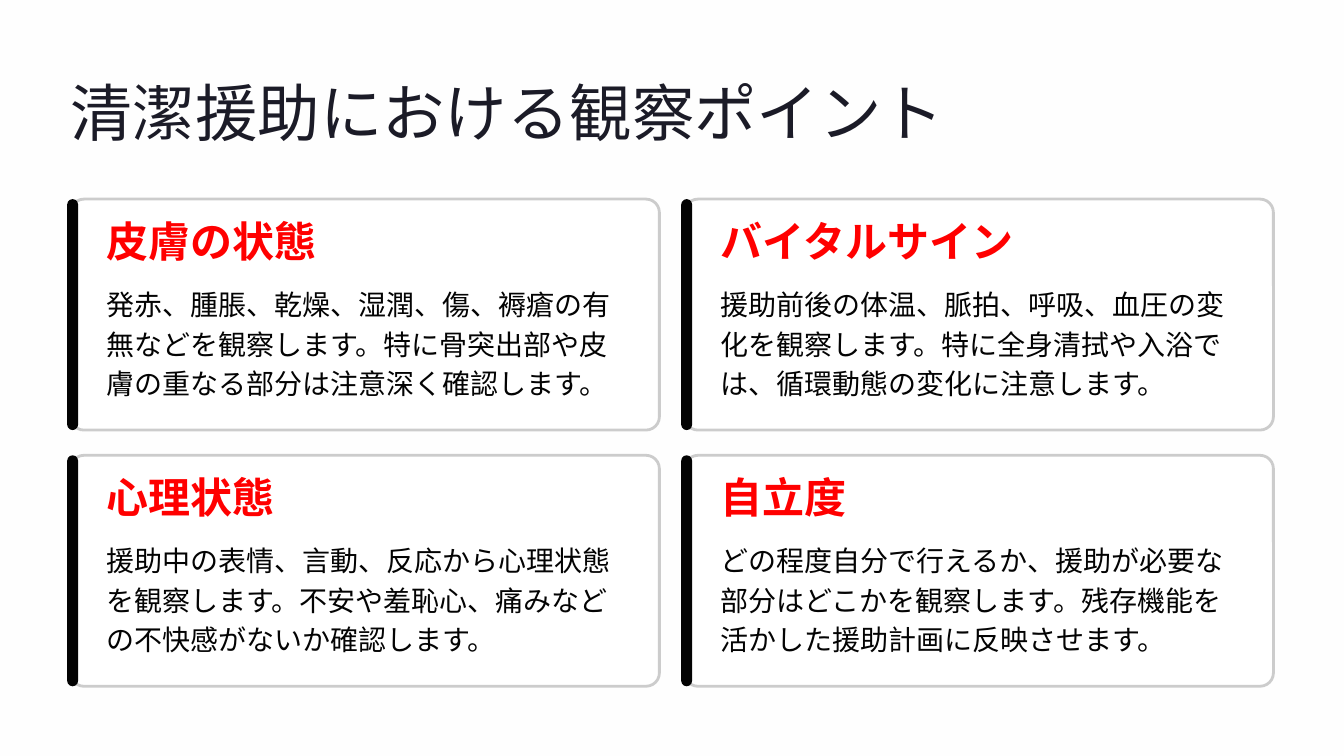
from pptx import Presentation
from pptx.dml.color import RGBColor
from pptx.enum.shapes import MSO_SHAPE
from pptx.util import Inches, Pt

BACKGROUND = RGBColor(0xFE, 0xFE, 0xFE)
WHITE = RGBColor(0xFF, 0xFF, 0xFF)
BORDER = RGBColor(0xCC, 0xCC, 0xCC)
NAVY = RGBColor(0x1B, 0x1B, 0x27)
BLACK = RGBColor(0x03, 0x03, 0x03)
RED = RGBColor(0xFF, 0x00, 0x00)

TITLE = {"name": "Inter", "size": Pt(53.5)}
HEADING = {"name": "Inter", "size": Pt(36), "bold": True}
BODY = {"name": "Cabin", "size": Pt(24)}

CARDS = [
    ("皮膚の状態",
     "発赤、腫脹、乾燥、湿潤、傷、褥瘡の有無などを観察します。"
     "特に骨突出部や皮膚の重なる部分は注意深く確認します。"),
    ("バイタルサイン",
     "援助前後の体温、脈拍、呼吸、血圧の変化を観察します。"
     "特に全身清拭や入浴では、循環動態の変化に注意します。"),
    ("心理状態",
     "援助中の表情、言動、反応から心理状態を観察します。"
     "不安や羞恥心、痛みなどの不快感がないか確認します。"),
    ("自立度",
     "どの程度自分で行えるか、援助が必要な部分はどこかを観察します。"
     "残存機能を活かした援助計画に反映させます。"),
]
LEFT, TOP = 0.84, 2.37
CARD_WIDTH, CARD_HEIGHT = 7.01, 2.75
GAP = 0.3


def add_text(text, left, top, width, height, style, color, spacing, wrap=False):
    box = slide.shapes.add_textbox(Inches(left), Inches(top), Inches(width), Inches(height))
    frame = box.text_frame
    margins = dict.fromkeys(("margin_left", "margin_top", "margin_right", "margin_bottom"), 0)
    for name, value in {**margins, "word_wrap": wrap}.items():
        setattr(frame, name, value)
    paragraph = frame.paragraphs[0]
    paragraph.line_spacing = Pt(spacing)
    run = paragraph.add_run()
    run.text = text
    for name, value in style.items():
        setattr(run.font, name, value)
    run.font.color.rgb = color


def add_rounded(left, top, width, height, radius, color):
    shape = slide.shapes.add_shape(MSO_SHAPE.ROUNDED_RECTANGLE, Inches(left), Inches(top),
                                   Inches(width), Inches(height))
    shape.adjustments[0] = radius
    shape.shadow.inherit = False
    shape.fill.solid()
    shape.fill.fore_color.rgb = color
    shape.line.fill.background()
    return shape


presentation = Presentation()
presentation.slide_width = Inches(16)
presentation.slide_height = Inches(9)
slide = presentation.slides.add_slide(presentation.slide_layouts[6])
slide.background.fill.solid()
slide.background.fill.fore_color.rgb = BACKGROUND

# Title
add_text("清潔援助における観察ポイント", LEFT, 0.84, 10.47, 0.93, TITLE, NAVY, 67)

# Two by two grid of cards
for index, (heading, body) in enumerate(CARDS):
    row, column = divmod(index, 2)
    left = LEFT + column * (CARD_WIDTH + GAP)
    top = TOP + row * (CARD_HEIGHT + GAP)

    # Card with its accent bar
    card = add_rounded(left, top, CARD_WIDTH, CARD_HEIGHT, 0.058, WHITE)
    card.line.color.rgb = BORDER
    card.line.width = Pt(2.4)
    add_rounded(left - 0.04, top, 0.13, CARD_HEIGHT, 0.5, BLACK)

    # Heading and body text
    add_text(heading, left + 0.43, top + 0.33, 3.74, 0.47, HEADING, RED, 33.5)
    add_text(body, left + 0.43, top + 0.98, 6.25, 1.44, BODY, BLACK, 34, wrap=True)

presentation.save("out.pptx")
